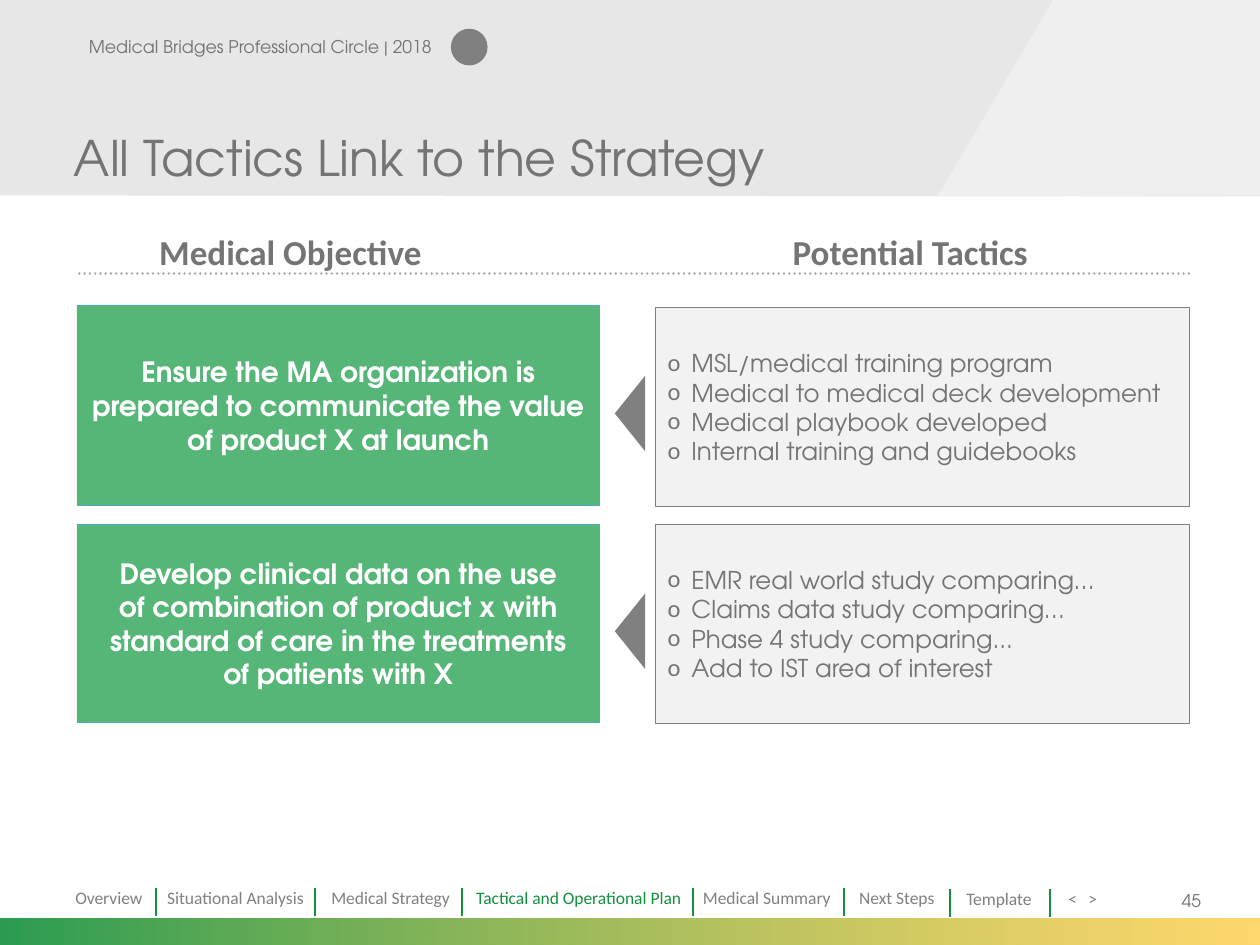
from lxml import etree
from pptx import Presentation
from pptx.dml.color import RGBColor
from pptx.enum.dml import MSO_LINE
from pptx.enum.shapes import MSO_CONNECTOR, MSO_SHAPE
from pptx.enum.text import MSO_ANCHOR, PP_ALIGN
from pptx.oxml.ns import qn
from pptx.util import Cm, Pt

LEFT, CENTER, RIGHT = PP_ALIGN.LEFT, PP_ALIGN.CENTER, PP_ALIGN.RIGHT
TOP, MIDDLE, BOTTOM = MSO_ANCHOR.TOP, MSO_ANCHOR.MIDDLE, MSO_ANCHOR.BOTTOM
RECT, OVAL = MSO_SHAPE.RECTANGLE, MSO_SHAPE.OVAL
TRIANGLE = MSO_SHAPE.ISOSCELES_TRIANGLE
STRAIGHT, DOTTED = MSO_CONNECTOR.STRAIGHT, MSO_LINE.ROUND_DOT
HEAD_FONT, NAV_FONT = "TeX Gyre Adventor", "Calibri"
COLORS = {name: RGBColor.from_string(value) for name, value in {
    "band": "D9D9D9", "pale": "F2F2F2", "text": "747474", "grey": "808080",
    "rule": "ADADAD", "green": "13913F", "yellow": "FEBE0D",
    "objective": "56B677", "edge": "4BACC6", "white": "FFFFFF"}.items()}

prs = Presentation()
prs.slide_width, prs.slide_height = Cm(25.4), Cm(19.05)
slide = prs.slides.add_slide(prs.slide_layouts[6])
shapes = slide.shapes


def set_opacity(shape, *percents):
    colors = shape._element.spPr.iter(qn("a:srgbClr"))
    for color, percent in zip(colors, percents):
        etree.SubElement(color, qn("a:alpha"), val=str(percent * 1000))


def write(shape, text, size, font=HEAD_FONT, color="text", bold=False,
          align=LEFT, anchor=TOP, bullet=None):
    frame = shape.text_frame
    frame.word_wrap = True
    frame.vertical_anchor = anchor
    lines = text if isinstance(text, list) else [text]
    for i, line in enumerate(lines):
        paragraph = frame.add_paragraph() if i else frame.paragraphs[0]
        paragraph.text = line
        paragraph.alignment = align
        if bullet:
            props = paragraph._p.get_or_add_pPr()
            props.set("marL", str(Cm(0.48)))
            props.set("indent", str(Cm(-0.48)))
            etree.SubElement(props, qn("a:buFont"), typeface=NAV_FONT)
            etree.SubElement(props, qn("a:buChar"), char=bullet)
        paragraph.font.name = font
        paragraph.font.size = Pt(size)
        paragraph.font.bold = bold
        paragraph.font.color.rgb = COLORS[color]


# Header band with the lighter slanted panel, in hundredths of a centimetre
for points, color, opacity in [
    ([(0, 0), (2540, 0), (2540, 396), (0, 394)], "band", 62),
    ([(2123, 0), (2540, 0), (2540, 394), (1890, 396)], "pale", 79),
]:
    builder = shapes.build_freeform(*points[0], scale=Cm(0.01))
    builder.add_line_segments(points[1:], close=True)
    panel = builder.convert_to_shape()
    panel.shadow.inherit = False
    panel.fill.solid()
    panel.fill.fore_color.rgb = COLORS[color]
    panel.line.fill.background()
    set_opacity(panel, opacity)

# Footer gradient
footer = shapes.add_shape(RECT, Cm(0), Cm(18.52), Cm(25.4), Cm(0.53))
footer.shadow.inherit = False
footer.fill.gradient()
footer.fill.gradient_angle = 0
for stop, color in zip(footer.fill.gradient_stops, ("green", "yellow")):
    stop.color.rgb = COLORS[color]
footer.line.fill.background()
set_opacity(footer, 90, 60)

# Header dot, objective and tactic boxes, pointers
objectives = [
    "Ensure the MA organization is prepared to communicate the value "
    "of product X at launch",
    "Develop clinical data on the use\nof combination of product x with "
    "standard of care in the treatments\nof patients with X",
]
tactics = [
    ["MSL/medical training program", "Medical to medical deck development",
     "Medical playbook developed", "Internal training and guidebooks"],
    ["EMR real world study comparing…", "Claims data study comparing…",
     "Phase 4 study comparing...", "Add to IST area of interest"],
]
objective_style = dict(size=16, color="white", bold=True, align=CENTER, anchor=MIDDLE)
tactic_style = dict(size=14, anchor=MIDDLE, bullet="o")
for kind, x, y, w, h, fill, edge, rotation, text, style in [
    (OVAL, 9.09, 0.58, 0.74, 0.74, "grey", None, 0, None, {}),
    (RECT, 1.55, 6.15, 10.54, 4.04, "objective", "edge", 0,
     objectives[0], objective_style),
    (RECT, 1.55, 10.57, 10.54, 3.99, "objective", "edge", 0,
     objectives[1], objective_style),
    (RECT, 13.21, 6.2, 10.77, 4.01, "pale", "grey", 0, tactics[0], tactic_style),
    (RECT, 13.21, 10.57, 10.77, 4.01, "pale", "grey", 0, tactics[1], tactic_style),
    (TRIANGLE, 11.94, 8.03, 1.52, 0.61, "grey", None, 270, None, {}),
    (TRIANGLE, 11.94, 12.42, 1.52, 0.61, "grey", None, 270, None, {}),
]:
    part = shapes.add_shape(kind, Cm(x), Cm(y), Cm(w), Cm(h))
    part.shadow.inherit = False
    part.rotation = rotation
    part.fill.solid()
    part.fill.fore_color.rgb = COLORS[fill]
    if edge:
        part.line.color.rgb = COLORS[edge]
        part.line.width = Pt(0.25)
    else:
        part.line.fill.background()
    if text:
        write(part, text, **style)

# Navigation dividers and the dotted rule under the headings
dividers = [(x, 17.91, x, 18.47) for x in (3.15, 6.35, 9.32, 13.97, 17.02)]
dividers += [(x, 17.93, x, 18.49) for x in (19.15, 21.16)]
for ends in dividers + [(1.6, 5.51, 23.98, 5.51)]:
    rule = shapes.add_connector(STRAIGHT, *map(Cm, ends))
    is_divider = ends in dividers
    rule.line.color.rgb = COLORS["green" if is_divider else "rule"]
    rule.line.width = Pt(1 if is_divider else 1.5)
    if not is_divider:
        rule.line.dash_style = DOTTED
        rule._element.spPr.find(qn("a:ln")).set("cap", "rnd")
    etree.SubElement(rule._element.spPr, qn("a:effectLst"))

# Title, header label, column headings, page number
heading_style = dict(size=20, font=NAV_FONT, bold=True, align=CENTER)
for text, x, y, w, h, style in [
    ("Medical Bridges Professional Circle | 2018", 1.22, 0.43, 8.05, 1.02,
     dict(size=10, align=CENTER, anchor=MIDDLE)),
    ("All Tactics Link to the Strategy", 1.24, 0, 19.05, 3.89,
     dict(size=28, anchor=BOTTOM)),
    ("Medical Objective", 2.64, 4.52, 6.43, 1.12, heading_style),
    ("Potential Tactics", 13.03, 4.52, 10.64, 1.12, heading_style),
    ("45", 22.73, 17.65, 1.73, 1.02, dict(size=10, align=RIGHT, anchor=MIDDLE)),
]:
    write(shapes.add_textbox(Cm(x), Cm(y), Cm(w), Cm(h)), text, **style)

# Navigation labels
active = "Tactical and Operational Plan"
for label, x, y, w in [
    ("Overview", 1.27, 17.75, 2.16),
    ("Situational Analysis", 3.12, 17.75, 3.35),
    ("Medical Strategy", 6.43, 17.75, 2.97),
    (active, 9.35, 17.75, 4.8),
    ("Medical Summary", 13.92, 17.75, 3.18),
    ("Next Steps", 17.07, 17.75, 2.18),
    ("Template", 19.23, 17.78, 1.91),
    ("<", 21.29, 17.78, 0.76),
    (">", 21.69, 17.78, 0.76),
]:
    write(shapes.add_textbox(Cm(x), Cm(y), Cm(w), Cm(0.69)), label, 10,
          font=NAV_FONT, color="green" if label == active else "grey")

prs.save("out.pptx")
